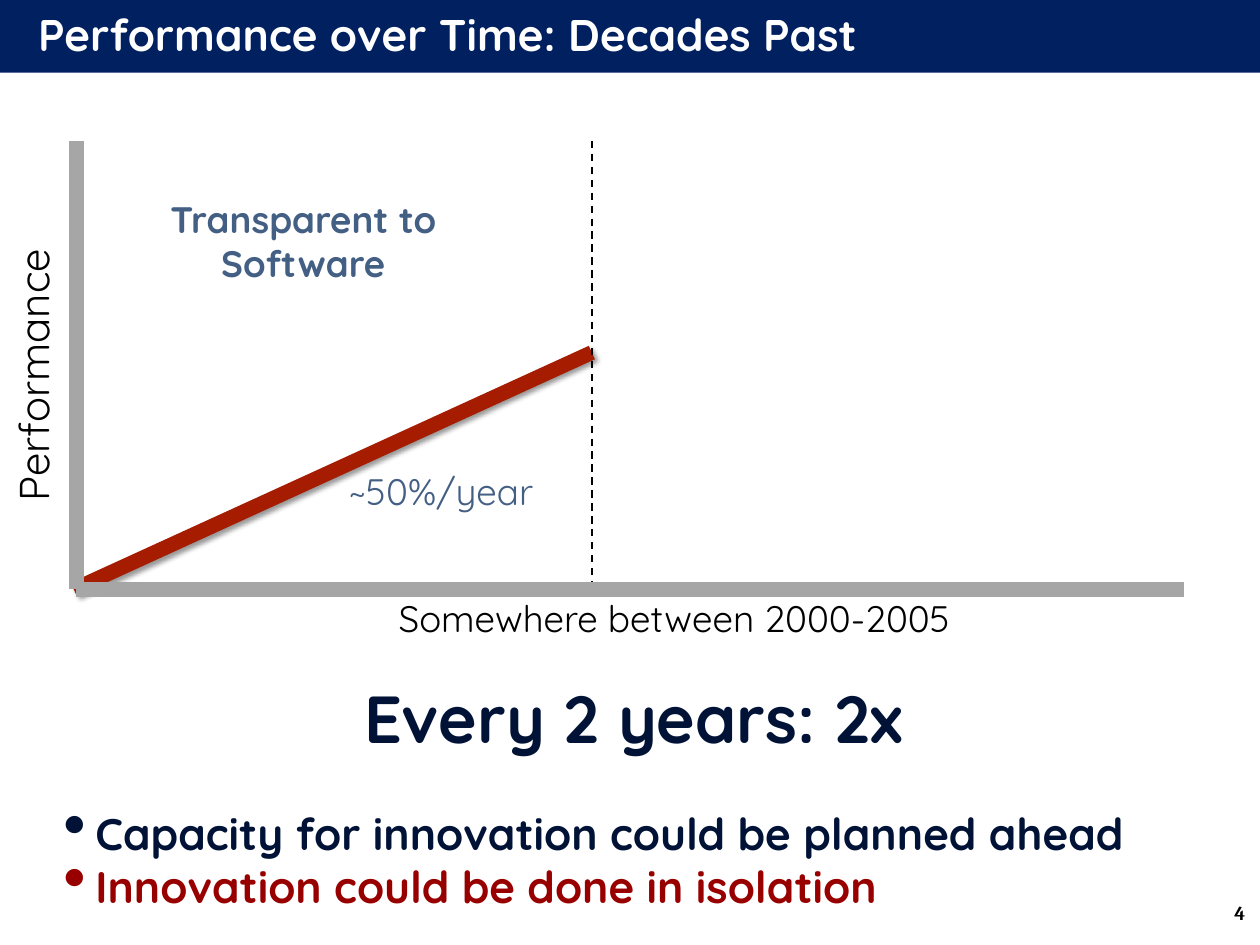
from pptx import Presentation
from pptx.dml.color import RGBColor
from pptx.enum.dml import MSO_LINE
from pptx.enum.shapes import MSO_CONNECTOR, MSO_SHAPE
from pptx.enum.text import MSO_ANCHOR, PP_ALIGN
from pptx.oxml.ns import qn
from pptx.util import Pt
from lxml.etree import SubElement

NAVY, INK, SLATE = "002060", "001337", "445F84"
RED, RUST, GREY = "980000", "A61C00", "A6A6A6"
BLACK, WHITE = "000000", "FFFFFF"


def color(code):
    return RGBColor.from_string(code)


class Page:
    font = "Quicksand"

    def __init__(self, slide):
        self.slide = slide

    def style(self, par, size, code, bold=False, align=PP_ALIGN.LEFT, font=None):
        par.alignment = align
        for run in par.runs:
            run.font.name = font or self.font
            run.font.size = Pt(size)
            run.font.bold = bold
            run.font.color.rgb = color(code)

    def frame(self, shape, pad, anchor):
        frame = shape.text_frame
        frame.word_wrap = True
        frame.vertical_anchor = anchor
        frame.margin_left = frame.margin_right = Pt(10)
        frame.margin_top = frame.margin_bottom = Pt(pad)
        return frame

    def banner(self, text, left, top, width, height):
        bar = self.slide.shapes.add_shape(
            MSO_SHAPE.RECTANGLE, Pt(left), Pt(top), Pt(width), Pt(height))
        bar.shadow.inherit = False
        bar.fill.solid()
        bar.fill.fore_color.rgb = color(NAVY)
        bar.line.fill.background()
        frame = self.frame(bar, 10, MSO_ANCHOR.MIDDLE)
        frame.margin_left = Pt(31)
        frame.text = text
        self.style(frame.paragraphs[0], 36, WHITE, True)

    def label(self, text, left, top, width, height, size, code, bold=False,
              align=PP_ALIGN.CENTER, anchor=MSO_ANCHOR.TOP, pad=5, turn=0, font=None):
        box = self.slide.shapes.add_textbox(Pt(left), Pt(top), Pt(width), Pt(height))
        box.rotation = turn
        frame = self.frame(box, pad, anchor)
        frame.text = text
        self.style(frame.paragraphs[0], size, code, bold, align, font)
        return frame

    def bullet(self, frame, text, code, gap=0):
        par = frame.add_paragraph()
        par.text = text
        par.space_before = Pt(gap)
        props = par._p.get_or_add_pPr()
        props.set("marL", str(Pt(51)))
        props.set("indent", str(Pt(-26)))
        tint = SubElement(props, qn("a:buClr"))
        SubElement(tint, qn("a:srgbClr"), val=code)
        SubElement(props, qn("a:buSzPct"), val="150000")
        SubElement(props, qn("a:buChar"), char="•")
        self.style(par, 36, code, True)

    def line(self, start, end, code, width, dash=None, shadow=False):
        line = self.slide.shapes.add_connector(
            MSO_CONNECTOR.STRAIGHT, *map(Pt, start + end))
        line.line.color.rgb = color(code)
        line.line.width = Pt(width)
        if dash:
            line.line.dash_style = dash
        effect = SubElement(line._element.spPr, qn("a:effectLst"))
        if shadow:
            cast = SubElement(effect, qn("a:outerShdw"), blurRad=str(Pt(4)),
                              dist=str(Pt(3)), dir="2700000", rotWithShape="0")
            tint = SubElement(cast, qn("a:srgbClr"), val=BLACK)
            SubElement(tint, qn("a:alpha"), val="40000")


def main():
    deck = Presentation()
    deck.slide_width, deck.slide_height = Pt(1024), Pt(768)
    page = Page(deck.slides.add_slide(deck.slide_layouts[6]))
    left, split, right = 62, 481, 962
    top, base = 114.5, 479

    body = page.label("Every 2 years: 2x", 16.5, 540, 997, 228, 54, INK, True, pad=10)
    page.bullet(body, "Capacity for innovation could be planned ahead", INK, 40)
    page.bullet(body, "Innovation could be done in isolation", RED)
    page.banner("Performance over Time: Decades Past", 0, -4, 1024, 63)
    page.label("4", 783, 727, 239, 41, 16, BLACK, True, PP_ALIGN.RIGHT, font="Cambria")

    page.line((60, base), (split, 286.5), RUST, 12, shadow=True)
    page.line((left, top), (left, base), GREY, 12)
    page.label("Somewhere between 2000-2005", 271, base, 554, 52, 29.9, BLACK)
    page.label("~50%/year", 263, 383, 191, 31, 29.9, SLATE, anchor=MSO_ANCHOR.MIDDLE)
    page.line((split, top), (split, base), BLACK, 1.5, MSO_LINE.DASH)
    page.line((right, base), (left, base), GREY, 12)
    page.label("Transparent to Software", 112, 137.5, 269, 117, 29.9, SLATE, True,
               anchor=MSO_ANCHOR.MIDDLE)
    page.label("Performance", -92.5, 270, 240, 55, 34.1, BLACK,
               align=PP_ALIGN.LEFT, pad=6, turn=270)
    deck.save("out.pptx")


if __name__ == "__main__":
    main()
